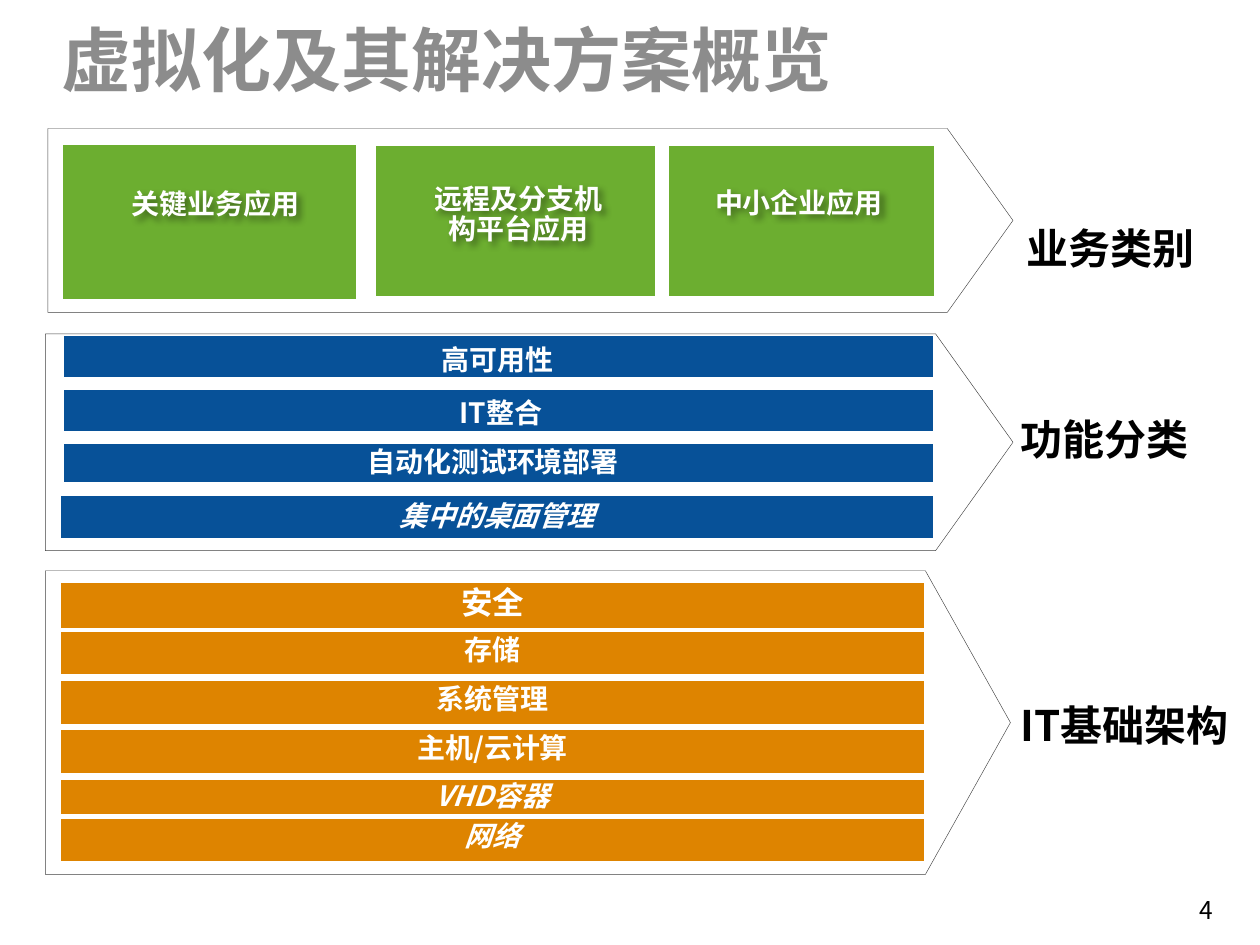
from lxml.etree import SubElement
from pptx import Presentation
from pptx.dml.color import RGBColor
from pptx.enum.shapes import MSO_SHAPE
from pptx.enum.text import MSO_ANCHOR, PP_ALIGN
from pptx.oxml.ns import qn
from pptx.util import Inches, Pt

GREEN = RGBColor(0x6C, 0xAE, 0x30)
BLUE = RGBColor(0x07, 0x51, 0x98)
ORANGE = RGBColor(0xDE, 0x84, 0x00)
GRAY = RGBColor(0x8C, 0x8C, 0x8C)
OUTLINE = RGBColor(0x40, 0x40, 0x40)
WHITE = RGBColor(0xFF, 0xFF, 0xFF)
BLACK = RGBColor(0, 0, 0)
CJK = "Noto Sans CJK SC"
COLS, ROWS = 100, 75


class Deck:
    """Style and current slide; lengths are columns and rows of a 100 x 75 grid."""

    def __init__(self):
        self.prs = Presentation()
        self.prs.slide_width, self.prs.slide_height = Inches(10), Inches(7.5)
        self.s = self.prs.slides.add_slide(self.prs.slide_layouts[5])

    def box(self, x, y, w, h):
        cw, rh = self.prs.slide_width / COLS, self.prs.slide_height / ROWS
        return [int(v) for v in (x * cw, y * rh, w * cw, h * rh)]

    def set_text(self, sp, text, size, color, align=PP_ALIGN.CENTER, bold=True,
                 italic=False, font=CJK, anchor=MSO_ANCHOR.TOP, wrap=True):
        tf = sp.text_frame
        tf.word_wrap, tf.vertical_anchor = wrap, anchor
        p = tf.paragraphs[0]
        p.add_run().text = text
        p.alignment, p.line_spacing = align, 0.9
        p.font.name, p.font.size = font, Pt(size)
        p.font.bold, p.font.italic = bold, italic
        p.font.color.rgb = color
        SubElement(p._p.pPr.find(qn("a:defRPr")), qn("a:ea"), typeface=CJK)

    def title(self, text, *grid):
        sp = self.s.shapes.title
        sp.left, sp.top, sp.width, sp.height = self.box(*grid)
        self.set_text(sp, text, 40, GRAY, PP_ALIGN.LEFT, font="Calibri")

    def text(self, text, *grid, size=16, color=WHITE, **style):
        sp = self.s.shapes.add_textbox(*self.box(*grid))
        self.set_text(sp, text, size, color, **style)
        return sp

    def glow_text(self, text, *grid):
        sp = self.text(text, *grid)
        effects = SubElement(sp._element.spPr, qn("a:effectLst"))
        shadow = SubElement(effects, qn("a:outerShdw"), blurRad="50800",
                            dist="38100", dir="2700000")
        tint = SubElement(shadow, qn("a:srgbClr"), val="000000")
        SubElement(tint, qn("a:alpha"), val="40000")

    def bar(self, color, *grid, text=None, size=16, **style):
        sp = self.s.shapes.add_shape(MSO_SHAPE.RECTANGLE, *self.box(*grid))
        sp.shadow.inherit = False
        sp.fill.solid()
        sp.fill.fore_color.rgb = color
        sp.line.color.rgb, sp.line.width = WHITE, Pt(2.5)
        if text:
            self.set_text(sp, text, size, WHITE, **style)

    def arrow(self, point, *grid):
        sp = self.s.shapes.add_shape(MSO_SHAPE.PENTAGON, *self.box(*grid))
        sp.shadow.inherit = False
        sp.adjustments[0] = point
        sp.fill.background()
        sp.line.color.rgb, sp.line.width = OUTLINE, Pt(0.25)


def main():
    d = Deck()
    d.title("虚拟化及其解决方案概览", 3.9, 1.6, 90, 12.5)

    # Business categories: block, then its caption
    for block, text, caption in [
        ((4.8, 11.3, 23.6, 12.6), "关键业务应用", (4.9, 14.6, 24.4, 3.7)),
        ((29.7, 11.4, 22.5, 12.3), "远程及分支机构平台应用", (32.8, 14.2, 16.7, 6.4)),
        ((52.9, 11.4, 21.4, 12.3), "中小企业应用", (53, 14.5, 20.8, 3.7)),
    ]:
        d.bar(GREEN, *block)
        d.glow_text(text, *caption)

    # Functions: bars with captions set slightly lower
    for i, (text, h, caption) in enumerate([
        ("高可用性", 3.6, (3.4, 27, 72.2, 3.7)),
        ("IT整合", 3.6, (24.8, 31.2, 29.9, 3.7)),
        ("自动化测试环境部署", 3.3, (5, 35.1, 68.3, 3.7)),
    ]):
        d.bar(BLUE, 4.9, 26.5 + 4.3 * i, 69.3, h)
        d.text(text, *caption)
    d.bar(BLUE, 4.7, 39.2, 69.5, 3.7, text="集中的桌面管理",
          italic=True, anchor=MSO_ANCHOR.MIDDLE)

    # Infrastructure layers
    for i, (text, size) in enumerate([("安全", 18), ("存储", 16),
                                      ("系统管理", 16), ("主机/云计算", 16)]):
        d.bar(ORANGE, 4.7, 46.1 + 3.9 * i, 68.8, 4 if i == 0 else 3.7,
              text=text, size=size)
    d.bar(ORANGE, 4.7, 64.8, 68.8, 3.7, text="网络", italic=True)
    d.bar(ORANGE, 4.7, 61.7, 68.8, 3.1, text="VHD容器",
          italic=True, anchor=MSO_ANCHOR.MIDDLE)

    # Arrow outlines and their labels
    for point, outline, text, label, wrap in [
        (0.357, (3.8, 10.2, 76.6, 14.6), "业务类别", (80.5, 17.6, 15.5, 5), False),
        (0.357, (3.6, 26.5, 76.8, 17.2), "功能分类", (80, 32.8, 15.5, 5), False),
        (0.28, (3.6, 45.3, 76.6, 24.1), "IT基础架构", (80, 55.5, 20, 5), True),
    ]:
        d.arrow(point, *outline)
        d.text(text, *label, size=24, color=BLACK, align=PP_ALIGN.LEFT, wrap=wrap)

    # Page number
    d.text("4", 94.2, 70.8, 6.7, 5.7, size=14, color=BLACK,
           align=PP_ALIGN.LEFT, bold=False)
    d.prs.save("out.pptx")


if __name__ == "__main__":
    main()
